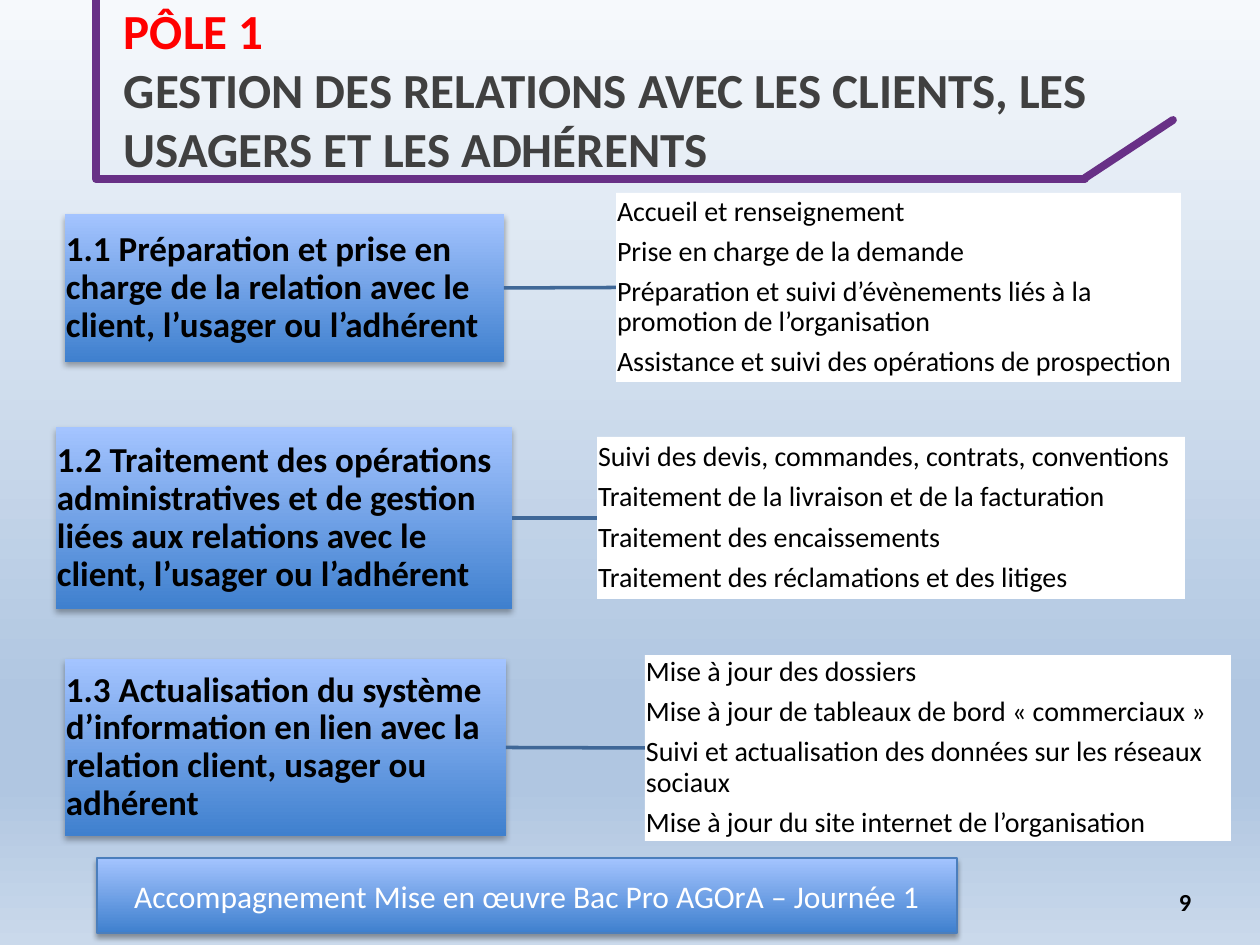
from lxml import etree
from copy import deepcopy
from pptx import Presentation, util as u
from pptx.dml.color import RGBColor
from pptx.enum import shapes, text
from pptx.oxml.ns import qn

PX = u.Inches(1) // 126
BLACK = RGBColor(0, 0, 0)
WHITE = RGBColor(255, 255, 255)
RED = RGBColor(255, 0, 0)
GREY = RGBColor(0x40, 0x40, 0x40)
PURPLE = RGBColor(0x68, 0x30, 0x86)
STEEL = RGBColor(0x3F, 0x67, 0x97)
EDGE = RGBColor(0x4B, 0x7E, 0xBC)
DEEP = RGBColor(0x3F, 0x80, 0xCE)
LIGHT = RGBColor(0xA4, 0xC4, 0xFF)
SKY = [(0, RGBColor(0xF6, 0xF9, 0xFC)), (0.74, RGBColor(0xB0, 0xC6, 0xE1)),
       (0.83, RGBColor(0xB0, 0xC6, 0xE1)), (1, RGBColor(0xCA, 0xD9, 0xEB))]
MID = text.MSO_ANCHOR.MIDDLE
LEFT, CENTER = text.PP_ALIGN.LEFT, text.PP_ALIGN.CENTER

prs = Presentation()
prs.slide_width, prs.slide_height = 1260 * PX, 945 * PX
slide = prs.slides.add_slide(prs.slide_layouts[6])
tree = slide.shapes


def write(shape, lines, size, colors=(BLACK,), bold=False, align=LEFT,
          anchor=MID, inset=13, pitch=None, after=0):
    """Fill a shape with one paragraph per line; the last colour repeats."""
    frame = shape.text_frame
    frame.word_wrap = True
    frame.vertical_anchor = anchor
    frame.margin_left = frame.margin_right = inset * PX
    frame.margin_top = frame.margin_bottom = min(inset, 6) * PX
    for i, line in enumerate(lines):
        para = frame.add_paragraph() if i else frame.paragraphs[0]
        para.alignment = align
        para.line_spacing = pitch
        para.space_after = u.Pt(after)
        run = para.add_run()
        run.text = line
        run.font.name, run.font.size, run.font.bold = "Calibri", u.Pt(size), bold
        run.font.color.rgb = colors[min(i, len(colors) - 1)]


def block(box, shade=None):
    """Draw a white box, or a blue one when shade gives alpha, blur and drop."""
    shape = tree.add_shape(shapes.MSO_SHAPE.RECTANGLE, *[n * PX for n in box])
    shape.line.fill.background()
    shape.shadow.inherit = False
    if not shade:
        shape.fill.solid()
        shape.fill.fore_color.rgb = WHITE
        return shape
    shape.fill.gradient()
    shape.fill.gradient_angle = 90
    for stop, color in zip(shape.fill.gradient_stops, (DEEP, LIGHT)):
        stop.color.rgb = color
    alpha, blur, drop = shade
    outer = etree.SubElement(shape.element.spPr.find(qn("a:effectLst")), qn("a:outerShdw"),
                             blurRad=str(u.Pt(blur)), dist=str(u.Pt(drop)),
                             dir="5400000", rotWithShape="0")
    tint = etree.SubElement(outer, qn("a:srgbClr"), val="000000")
    etree.SubElement(tint, qn("a:alpha"), val=str(alpha * 1000))
    return shape


# Background
fill = slide.background.fill
fill.gradient()
fill.gradient_angle = 270
stops = slide.element.find(".//" + qn("a:gsLst"))
while len(stops) < len(SKY):
    stops.append(deepcopy(stops[-1]))
for stop, (pos, color) in zip(fill.gradient_stops, SKY):
    stop.position, stop.color.rgb = pos, color

# Title and its frame
for ends in [(96, 179, 1085, 179), (1085, 178, 1173, 120), (96, 178, 96, 0)]:
    rule = tree.add_connector(shapes.MSO_CONNECTOR.STRAIGHT, *[n * PX for n in ends])
    rule.line.color.rgb, rule.line.width = PURPLE, u.Pt(4.5)
    rule.element.spPr.find(qn("a:ln")).set("cap", "rnd")
    etree.SubElement(rule.element.spPr, qn("a:effectLst"))
title = tree.add_textbox(111 * PX, 0, 1086 * PX, 178 * PX)
write(title, ["PÔLE 1", "GESTION DES RELATIONS AVEC LES CLIENTS, LES USAGERS ET LES ADHÉRENTS"],
      28, colors=(RED, GREY), bold=True)

# Activities, each joined to its tasks
rows = [
    ((65, 214, 439, 148), (616, 193, 565, 189),
     "1.1 Préparation et prise en charge de la relation avec le client, l’usager ou l’adhérent",
     ["Accueil et renseignement",
      "Prise en charge de la demande",
      "Préparation et suivi d’évènements liés à la promotion de l’organisation",
      "Assistance et suivi des opérations de prospection"]),
    ((56, 427, 456, 182), (597, 437, 588, 162),
     "1.2 Traitement des opérations administratives et de gestion liées aux relations "
     "avec le client, l’usager ou l’adhérent",
     ["Suivi des devis, commandes, contrats, conventions",
      "Traitement de la livraison et de la facturation",
      "Traitement des encaissements",
      "Traitement des réclamations et des litiges"]),
    ((65, 659, 441, 177), (645, 655, 586, 186),
     "1.3 Actualisation du système d’information en lien avec la relation client, "
     "usager ou adhérent",
     ["Mise à jour des dossiers",
      "Mise à jour de tableaux de bord « commerciaux »",
      "Suivi et actualisation des données sur les réseaux sociaux",
      "Mise à jour du site internet de l’organisation"]),
]
for left, right, name, tasks in rows:
    head = block(left, shade=(32, 3.5, 2.2))
    write(head, [name], 20, bold=True, inset=1, pitch=0.9, after=7)
    body = block(right)
    write(body, tasks, 16, inset=1, pitch=0.9, after=5.6)
    link = tree.add_connector(shapes.MSO_CONNECTOR.STRAIGHT, 0, 0, 0, 0)
    link.begin_connect(head, 3)
    link.end_connect(body, 1)
    link.line.color.rgb, link.line.width = STEEL, u.Pt(2)
    etree.SubElement(link.element.spPr, qn("a:effectLst"))

# Footer and slide number
foot = block((97, 858, 860, 75), shade=(35, 3.1, 1.8))
foot.line.color.rgb, foot.line.width = EDGE, u.Pt(0.75)
write(foot, ["Accompagnement Mise en œuvre Bac Pro AGOrA – Journée 1"], 18,
      colors=(WHITE,), align=CENTER)
number = tree.add_textbox(1166 * PX, 881 * PX, 84 * PX, 50 * PX)
write(number, ["9"], 14, bold=True, anchor=text.MSO_ANCHOR.TOP)

prs.save("out.pptx")
